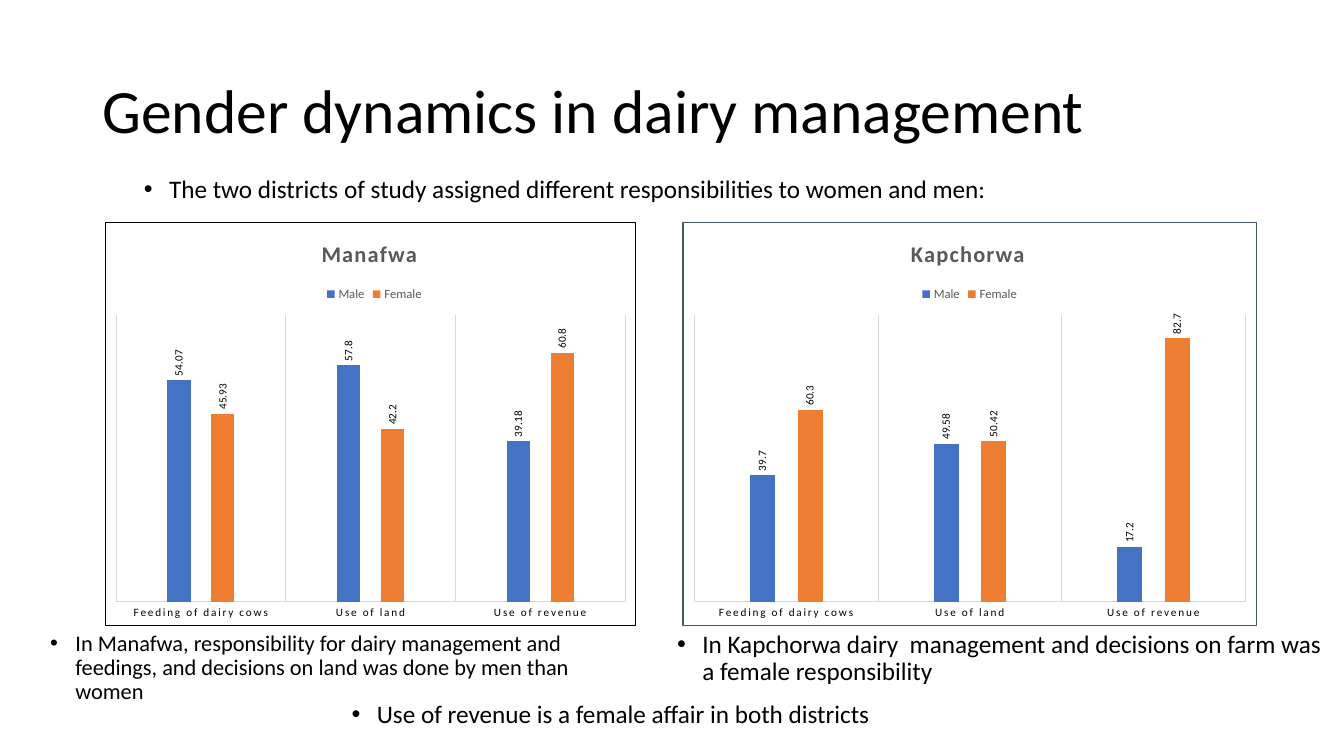
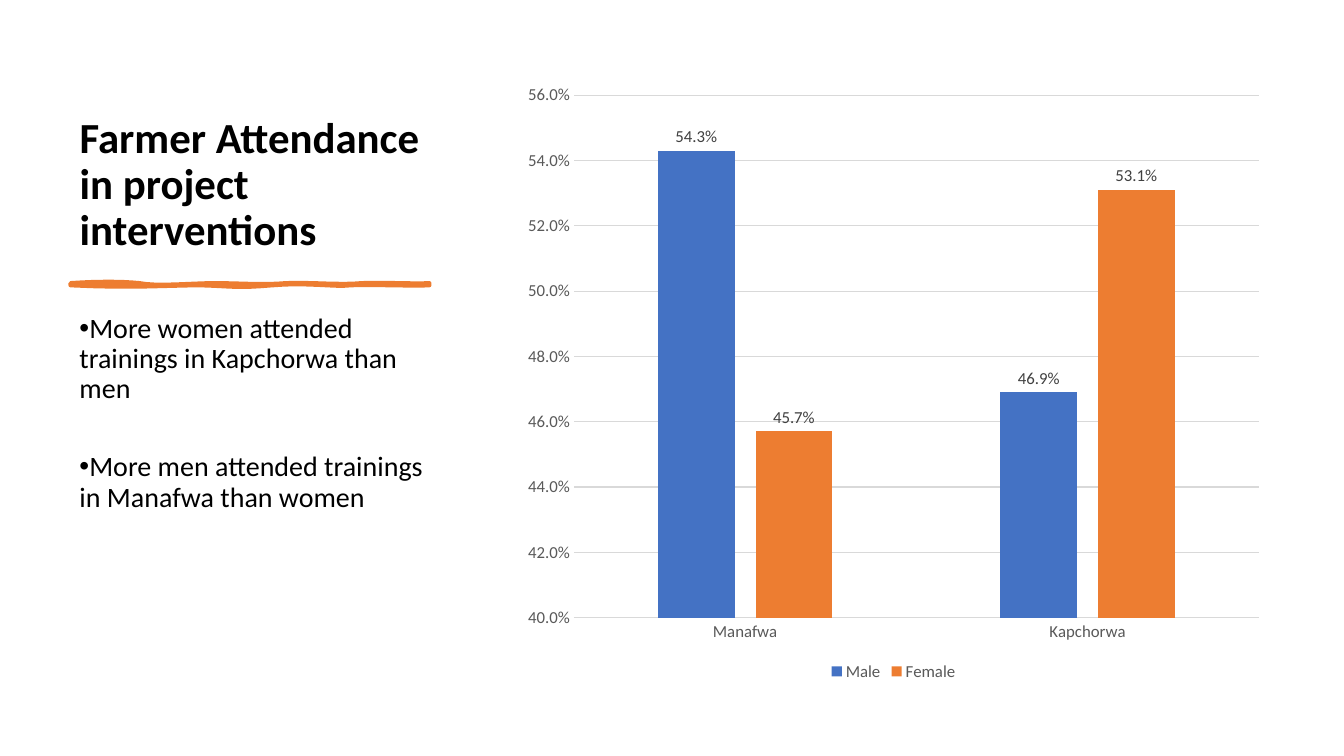
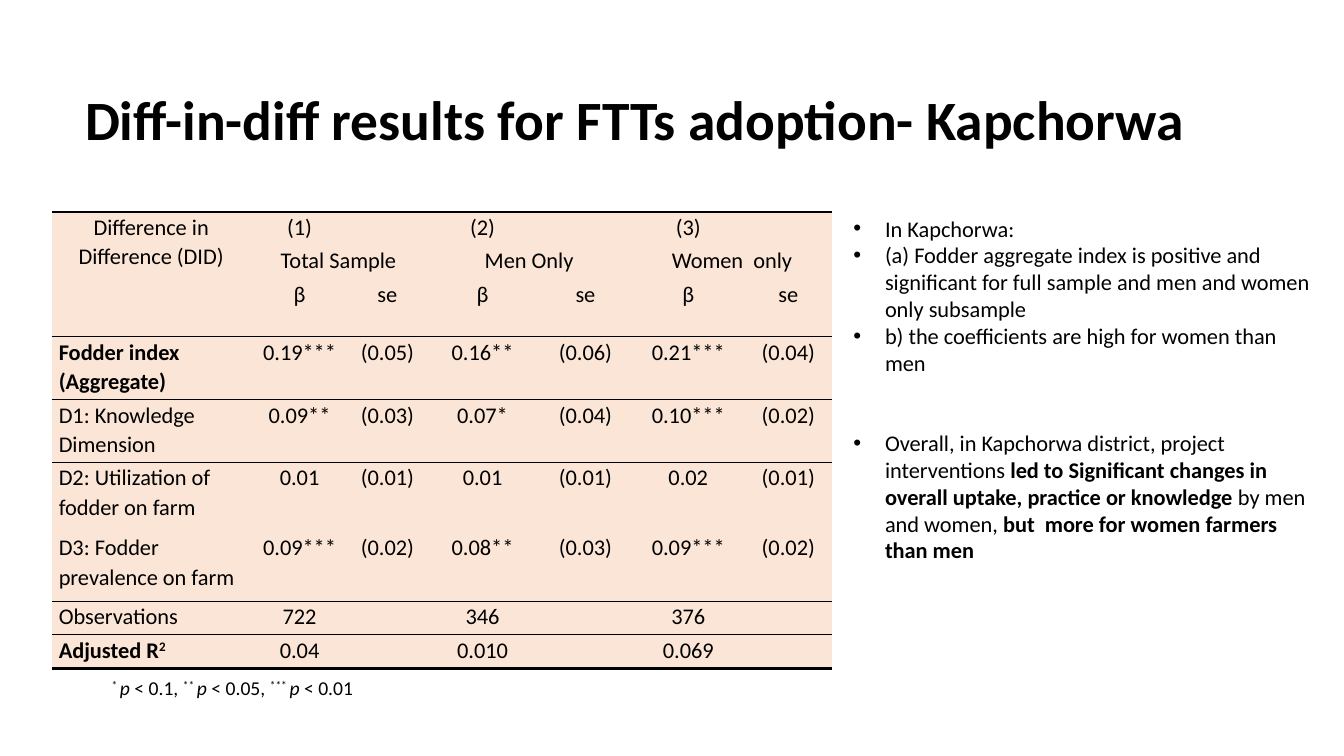
"""Build three slides on gender in dairy management and fodder adoption."""
from lxml import etree
from pptx import Presentation
from pptx.chart.data import CategoryChartData
from pptx.dml.color import RGBColor
from pptx.enum.chart import XL_CHART_TYPE as ChartType
from pptx.enum.chart import XL_LABEL_POSITION as LabelPosition
from pptx.enum.chart import XL_LEGEND_POSITION as LegendPosition
from pptx.enum.chart import XL_TICK_LABEL_POSITION as TickLabels
from pptx.enum.chart import XL_TICK_MARK as TickMark
from pptx.enum.text import MSO_ANCHOR as Anchor
from pptx.enum.text import MSO_AUTO_SIZE as AutoSize
from pptx.enum.text import PP_ALIGN as Align
from pptx.oxml import parse_xml
from pptx.oxml.ns import nsdecls, qn
from pptx.util import Pt

FONT = "Calibri"
BLACK = RGBColor(0x00, 0x00, 0x00)
DARK = RGBColor(0x40, 0x40, 0x40)
GRAY = RGBColor(0x59, 0x59, 0x59)
PALE = RGBColor(0xD9, 0xD9, 0xD9)
SLATE = RGBColor(0x44, 0x54, 0x6A)
BLUE = RGBColor(0x44, 0x72, 0xC4)
ORANGE = RGBColor(0xED, 0x7D, 0x31)
PEACH = RGBColor(0xFB, 0xE5, 0xD6)


def add_bullets(page, frame, size, paragraphs, margin=22.3, indent=-18, line=0.9, after=6, last_gap=0):
    """Add bulleted paragraphs, each a tuple of spans that alternate plain and bold."""
    box = page.shapes.add_textbox(*map(Pt, frame))
    box.text_frame.word_wrap = True
    for number, spans in enumerate(paragraphs):
        para = box.text_frame.paragraphs[0] if number == 0 else box.text_frame.add_paragraph()
        para.line_spacing = line
        para.space_after = Pt(after)
        if number and number == len(paragraphs) - 1:
            para.space_before = Pt(last_gap)
        properties = para._p.get_or_add_pPr()
        properties.set("marL", str(Pt(margin)))
        properties.set("indent", str(Pt(indent)))
        etree.SubElement(properties, qn("a:buFont")).set("typeface", "Arial")
        etree.SubElement(properties, qn("a:buChar")).set("char", "•")
        for position, text in enumerate(spans):
            span = para.add_run()
            span.text = text
            span.font.name, span.font.size = FONT, Pt(size)
            span.font.color.rgb = BLACK
            span.font.bold = position % 2 == 1


def add_gender_chart(page, frame, categories, male, female, top, label_size, label_color, layouts, border):
    """Add a clustered column chart of male and female values and return it."""
    data = CategoryChartData()
    data.categories = categories
    data.add_series("Male", male)
    data.add_series("Female", female)
    chart = page.shapes.add_chart(ChartType.COLUMN_CLUSTERED, *map(Pt, frame), data).chart
    chart.font.name, chart.font.size = FONT, Pt(10)
    chart.font.color.rgb = BLACK
    chart.has_title = False
    chart.has_legend = True
    chart.legend.include_in_layout = False
    plot = chart.plots[0]
    plot.vary_by_categories = False
    for series, color in zip(plot.series, (BLUE, ORANGE)):
        series.format.fill.solid()
        series.format.fill.fore_color.rgb = color
        series.invert_if_negative = False
    plot.has_data_labels = True
    labels = plot.data_labels
    labels.show_value = True
    labels.position = LabelPosition.OUTSIDE_END
    axis = chart.category_axis
    axis.major_tick_mark = axis.minor_tick_mark = TickMark.NONE
    axis.tick_label_position = TickLabels.NEXT_TO_AXIS
    axis.format.line.color.rgb = PALE
    axis.format.line.width = Pt(0.75)
    chart.value_axis.maximum_scale = top
    for font, color in ((labels.font, label_color), (axis.tick_labels.font, label_color),
                        (chart.legend.font, GRAY)):
        font.name, font.size = FONT, Pt(label_size)
        font.color.rgb = color
    space = chart._chartSpace
    line = f'<a:solidFill><a:srgbClr val="{border}"/></a:solidFill>' if border else "<a:noFill/>"
    space.find(qn("c:chart")).addnext(parse_xml(
        f'<c:spPr {nsdecls("c", "a")}><a:noFill/><a:ln w="{Pt(0.75)}">{line}</a:ln></c:spPr>'))
    if "title" in layouts:
        chart.has_title = True
        chart.chart_title.text_frame.text = layouts["title"][0]
    for part, index in (("plotArea", 0), ("legend", 1), ("title", 1)):
        if part not in layouts:
            continue
        element = space.find(f".//{qn('c:' + part)}")
        for old in element.findall(qn("c:layout")):
            element.remove(old)
        values = [value for value in layouts[part] if not isinstance(value, str)]
        target = '<c:layoutTarget val="inner"/>' if part == "plotArea" else ""
        modes = '<c:xMode val="edge"/><c:yMode val="edge"/>'
        sizes = "".join(f'<c:{name} val="{value}"/>' for name, value in zip("xywh", values))
        element.insert(index, parse_xml(
            f'<c:layout {nsdecls("c")}><c:manualLayout>{target}{modes}{sizes}</c:manualLayout></c:layout>'))
    return chart


deck = Presentation()
deck.slide_width, deck.slide_height = Pt(960), Pt(540)

titles = [
    ("Gender dynamics in dairy management", (66, 29, 828, 104), 44, False, Anchor.MIDDLE, Align.LEFT),
    ("Farmer Attendance in project interventions", (49.7, 50.4, 270, 135.4), 30.6, True, Anchor.BOTTOM, Align.LEFT),
    ("Diff-in-diff results for FTTs adoption- Kapchorwa", (47.5, 51, 812, 73), 39.6, True, Anchor.MIDDLE, Align.CENTER),
]
pages = []
for text, frame, size, bold, anchor, align in titles:
    page = deck.slides.add_slide(deck.slide_layouts[5])
    title = page.shapes.title
    title.left, title.top, title.width, title.height = map(Pt, frame)
    title.text_frame.text = text
    title.text_frame.word_wrap = True
    title.text_frame.auto_size = AutoSize.NONE
    title.text_frame.vertical_anchor = anchor
    para = title.text_frame.paragraphs[0]
    para.alignment, para.line_spacing = align, 0.9
    font = para.runs[0].font
    font.name, font.size, font.bold = FONT, Pt(size), bold
    font.color.rgb = BLACK
    pages.append(page)
dynamics, attendance, results = pages

tasks = ["Feeding of dairy cows", "Use of land", "Use of revenue"]
districts = [
    ("Kapchorwa", (487.5, 158.5, 410.5, 289), (39.7, 49.58, 17.2), (60.3, 50.42, 82.7), 90, SLATE, 0.39),
    ("Manafwa", (75, 158.5, 379.5, 289), (54.07, 57.8, 39.18), (45.93, 42.2, 60.8), 70, BLACK, 0.4),
]
for name, frame, male, female, top, border, title_left in districts:
    layouts = {"plotArea": (0.02, 0.23, 0.96, 0.71), "legend": (0.41, 0.15), "title": (name, title_left, 0.03)}
    chart = add_gender_chart(dynamics, frame, tasks, male, female, top, 8, BLACK, layouts, border)
    chart.legend.position = LegendPosition.TOP
    chart.legend.font.size = Pt(9)
    chart.plots[0].gap_width, chart.plots[0].overlap = 444, -90
    chart.value_axis.minimum_scale = 0
    chart.value_axis.has_major_gridlines = False
    chart.value_axis.visible = False
    axis = chart.category_axis
    axis.has_major_gridlines = True
    axis.major_gridlines.format.line.color.rgb = PALE
    axis.major_gridlines.format.line.width = Pt(0.75)
    axis.tick_labels.font._rPr.set("spc", "120")
    for body in chart._chartSpace.xpath(".//c:dLbls/c:txPr/a:bodyPr"):
        body.set("rot", "-5400000")
        body.set("vert", "horz")
    span = chart.chart_title.text_frame.paragraphs[0].runs[0]
    span.font.name, span.font.size, span.font.bold = FONT, Pt(16), True
    span.font.color.rgb = GRAY
    span._r.get_or_add_rPr().set("spc", "100")

remarks = [
    ((91.4, 122.4, 645, 26.6), 18, "The two districts of study assigned different responsibilities to women and men:"),
    ((24.5, 447.8, 430, 60), 16, "In Manafwa, responsibility for dairy management and feedings, "
                                 "and decisions on land was done by men than women"),
    ((472.3, 447.8, 479.5, 46.8), 18, "In Kapchorwa dairy  management and decisions on farm was a female responsibility"),
    ((239.8, 497.5, 479.5, 26.6), 18, "Use of revenue is a female affair in both districts"),
]
for frame, size, text in remarks:
    add_bullets(dynamics, frame, size, [(text,)])

stroke_start = (50.4, 202.3)
stroke_curves = [
    ((70, 201), (87, 201), (99.5, 202.3)),
    ((111.5, 204.5), (127.5, 203), (150.5, 202.3)),
    ((173.5, 202.3), (187, 203.8), (204.5, 202.3)),
    ((222, 201.6), (244, 203.8), (258.5, 202.3)),
    ((273, 201.6), (296.6, 203), (306.7, 202.3)),
    ((306.7, 203), (306.7, 203.8), (306.7, 203.8)),
    ((294, 204.5), (262, 203), (250.5, 203.8)),
    ((239, 205.2), (219, 201.6), (194.5, 203.8)),
    ((169, 206), (166.5, 204.5), (143.5, 203.8)),
    ((119.5, 203.8), (95, 206), (50.4, 203.8)),
]
points = []
start = stroke_start
for first, second, end in stroke_curves:
    for step in range(1, 9):
        t = step / 8
        points.append(tuple(
            Pt((1 - t) ** 3 * a + 3 * (1 - t) ** 2 * t * b + 3 * (1 - t) * t ** 2 * c + t ** 3 * d)
            for a, b, c, d in zip(start, first, second, end)))
    start = end
builder = attendance.shapes.build_freeform(*map(Pt, stroke_start))
builder.add_line_segments(points, close=True)
stroke = builder.convert_to_shape()
stroke.shadow.inherit = False
stroke.fill.solid()
stroke.fill.fore_color.rgb = ORANGE
stroke.line.color.rgb = ORANGE
stroke.line.width = Pt(3)

add_bullets(attendance, (49.7, 221, 270, 268.5), 20, [
    ("More women attended trainings in Kapchorwa than men",),
    ("More men attended trainings in Manafwa than women",),
], margin=0, last_gap=28)

chart = add_gender_chart(
    attendance, (366.5, 50.4, 543.6, 439.2), ["Manafwa", "Kapchorwa"], (0.543, 0.469), (0.457, 0.531),
    0.56, 12, DARK, {"plotArea": (0.08, 0.04, 0.9, 0.85)}, None)
chart.legend.position = LegendPosition.BOTTOM
chart.plots[0].gap_width, chart.plots[0].overlap = 219, -27
axis = chart.value_axis
axis.minimum_scale, axis.major_unit = 0.4, 0.02
axis.major_tick_mark = axis.minor_tick_mark = TickMark.NONE
axis.format.line.fill.background()
axis.major_gridlines.format.line.color.rgb = PALE
axis.major_gridlines.format.line.width = Pt(0.75)
axis.tick_labels.font.name, axis.tick_labels.font.size = FONT, Pt(12)
for ticks in (axis.tick_labels, chart.category_axis.tick_labels):
    ticks.font.color.rgb = GRAY
for labels in (axis.tick_labels, chart.plots[0].data_labels):
    labels.number_format, labels.number_format_is_linked = "0.0%", False

note = results.shapes.add_textbox(Pt(72.7), Pt(478), Pt(479.5), Pt(26))
note.text_frame.word_wrap = True
levels = note.text_frame.paragraphs[0]
levels.line_spacing = 1.07
for stars, limit in (("* ", " < 0.1, "), ("** ", " < 0.05, "), ("*** ", " < 0.01")):
    for text in (stars, "p", limit):
        span = levels.add_run()
        span.text = text
        span.font.name, span.font.size = FONT, Pt(14)
        span.font.color.rgb = BLACK
        span.font.italic = text == "p"
        if text == stars:
            span._r.get_or_add_rPr().set("baseline", "30000")

add_bullets(results, (602.6, 149.8, 348.5, 298), 16, [
    ("In Kapchorwa:",),
    ("(a) Fodder aggregate index is positive and significant for full sample and men and women only subsample",),
    ("b) the coefficients are high for women than men",),
    ("Overall, in Kapchorwa district, project interventions ",
     "led to Significant changes in overall uptake, practice or knowledge",
     " by men and women, ", "but  more for women farmers than men"),
], margin=22.5, indent=-22.5, line=1, after=0, last_gap=38)

rows = [
    ("Difference in Difference (DID)", "(1)", "", "(2)", "", "(3)", ""),
    ("", "Total Sample", "", "Men Only", "", "Women  only", ""),
    ("", "β", "se", "β", "se", "β", "se"),
    ("Fodder index (Aggregate)", "0.19***", "(0.05)", "0.16**", "(0.06)", "0.21***", "(0.04)"),
    ("D1: Knowledge Dimension", "0.09**", "(0.03)", "0.07*", "(0.04)", "0.10***", "(0.02)"),
    ("D2: Utilization of fodder on farm", "0.01", "(0.01)", "0.01", "(0.01)", "0.02", "(0.01)"),
    ("D3: Fodder prevalence on farm", "0.09***", "(0.02)", "0.08**", "(0.03)", "0.09***", "(0.02)"),
    ("Observations", "722", "", "346", "", "376", ""),
    ("Adjusted R", "0.04", "", "0.010", "", "0.069", ""),
]
widths = [142, 70, 55.5, 80.5, 66.5, 80.5, 62.5]
heights = [24, 24, 41, 45, 45, 50, 49, 24, 24]
rules = [2, 0, 0, 1, 1, 1, 0, 1, 1, 2]
table = results.shapes.add_table(
    len(rows), len(widths), Pt(37), Pt(151.5), Pt(sum(widths)), Pt(sum(heights))).table
table.first_row = table.horz_banding = False
for column, width in zip(table.columns, widths):
    column.width = Pt(width)
for row, height in zip(table.rows, heights):
    row.height = Pt(height)
table.cell(0, 0).merge(table.cell(2, 0))
for left in (1, 3, 5):
    table.cell(1, left).merge(table.cell(1, left + 1))
for r, texts in enumerate(rows):
    for c, text in enumerate(texts):
        cell = table.cell(r, c)
        cell.margin_left = cell.margin_right = Pt(5)
        cell.margin_top = cell.margin_bottom = 0
        bottom = rules[3] if (r, c) == (0, 0) else rules[r + 1]
        for side, weight in (("lnL", 0), ("lnR", 0), ("lnT", rules[r]), ("lnB", bottom)):
            paint = f'<a:solidFill><a:srgbClr val="{BLACK}"/></a:solidFill>' if weight else "<a:noFill/>"
            cell._tc.get_or_add_tcPr().append(parse_xml(
                f'<a:{side} {nsdecls("a")} w="{Pt(weight)}">{paint}</a:{side}>'))
        cell.fill.solid()
        cell.fill.fore_color.rgb = PEACH
        if not text:
            continue
        para = cell.text_frame.paragraphs[0]
        para.text = text
        para.line_spacing = 1.07
        para.alignment = Align.LEFT if c == 0 and r else Align.CENTER
        if text == "Adjusted R":
            square = para.add_run()
            square.text = "2"
            square._r.get_or_add_rPr().set("baseline", "30000")
        for span in para.runs:
            span.font.name, span.font.size = FONT, Pt(16)
            span.font.bold = c == 0 and r in (3, 8)
            span.font.color.rgb = BLACK

deck.save("out.pptx")
